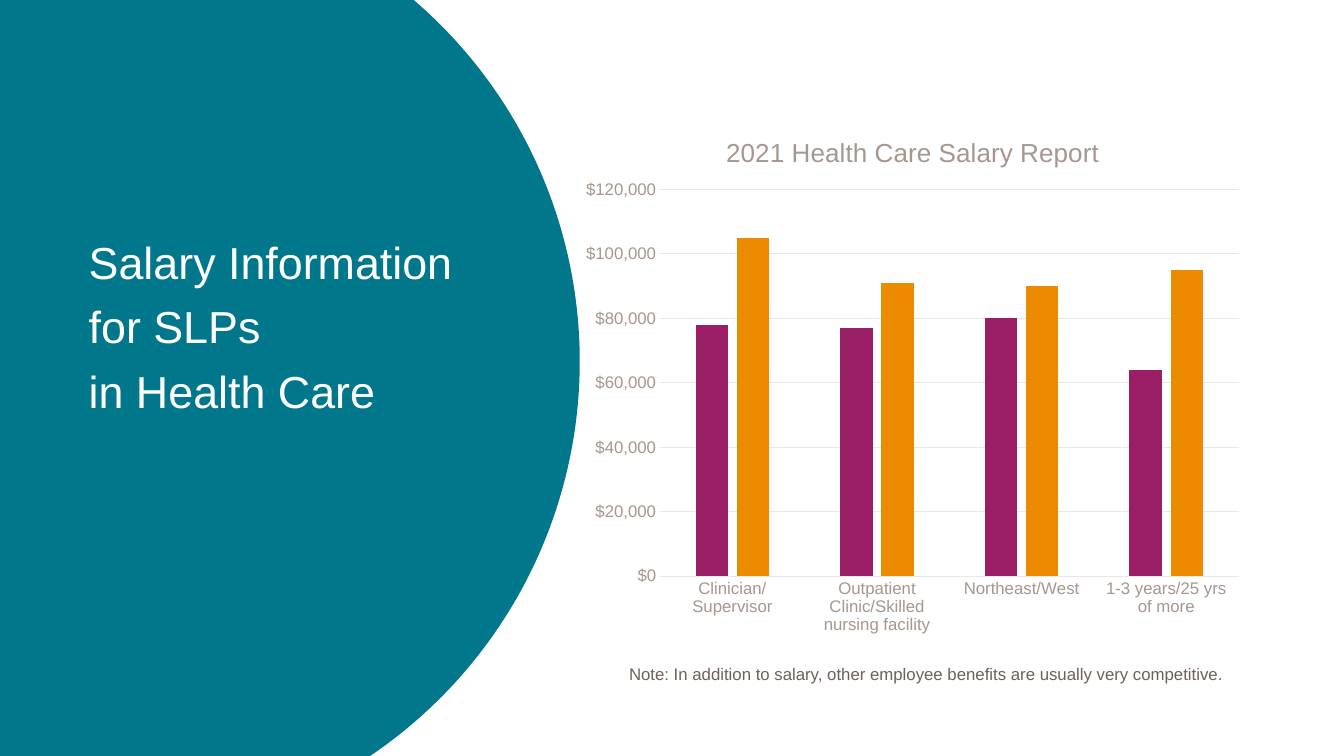
"""Build the slide on health care salaries for SLPs."""
from lxml import etree
from pptx import Presentation
from pptx import util as u
from pptx.chart.data import CategoryChartData
from pptx.dml.color import RGBColor
from pptx.enum import chart as charts, shapes, text
from pptx.oxml import parse_xml
from pptx.oxml.ns import nsdecls

PX = 9144
FONT = "Arial"
COLORS = {
    "teal": "00778B", "plum": "991E66", "orange": "ED8B00", "white": "FFFFFF",
    "brown": "6E6159", "taupe": "A5978F", "grid": "EAE7E5",
}
CATEGORIES = ["Clinician/Supervisor", "Outpatient Clinic/Skilled nursing facility",
              "Northeast/West", "1-3 years/25 yrs of more"]
SERIES = [("Series 1", "plum", (78000, 77000, 80000, 64000)),
          ("Series 2", "orange", (105000, 91000, 90000, 95000))]
TITLE_LAYOUT = {"xMode": "edge", "yMode": "edge", "x": 0.22, "y": 0.04}
PLOT_LAYOUT = {"layoutTarget": "inner", "xMode": "edge", "yMode": "edge",
               "x": 0.13, "y": 0.15, "w": 0.85, "h": 0.72}


def px(*lengths):
    return [u.Emu(length * PX) for length in lengths]


def color(name):
    return RGBColor.from_string(COLORS[name])


def apply(target, formats):
    for name, value in formats.items():
        setattr(target, name, value)


def style_font(font, size, color_name):
    apply(font, {"name": FONT, "size": u.Pt(size), "bold": False})
    font.color.rgb = color(color_name)


def fill_text(shape, words, size, color_name, frame_formats, paragraph_formats):
    frame = shape.text_frame
    apply(frame, {"word_wrap": True, "auto_size": text.MSO_AUTO_SIZE.NONE, **frame_formats})
    paragraph = frame.paragraphs[0]
    paragraph.text = words
    apply(paragraph, {"alignment": text.PP_ALIGN.LEFT, **paragraph_formats})
    for run in paragraph.runs:
        style_font(run.font, size, color_name)


def add_backdrop(slide, box):
    circle = slide.shapes.add_shape(shapes.MSO_SHAPE.OVAL, *px(*box))
    circle.shadow.inherit = False
    circle.fill.solid()
    circle.fill.fore_color.rgb = color("teal")
    circle.line.fill.background()
    slide.shapes._spTree.insert(2, circle._element)


def add_title(slide, words, box):
    title = slide.shapes.title
    apply(title, dict(zip(("left", "top", "width", "height"), px(*box))))
    fill_text(title, words, 32, "white",
              {"vertical_anchor": text.MSO_ANCHOR.BOTTOM}, {"line_spacing": 1.2})


def add_note(slide, words, box):
    note = slide.shapes.add_textbox(*px(*box))
    fill_text(note, words, 12, "brown",
              {"vertical_anchor": text.MSO_ANCHOR.TOP}, {"line_spacing": 0.9})


def manual_layout(values):
    layout = parse_xml(f"<c:layout {nsdecls('c')}><c:manualLayout/></c:layout>")
    for name, value in values.items():
        tag = f"{{{layout.nsmap['c']}}}{name}"
        etree.SubElement(layout[0], tag).set("val", str(value))
    return layout


def place(element, values):
    for layout in element.findall("c:layout", element.nsmap):
        element.remove(layout)
    index = 1 if element.tag.endswith("}title") else 0
    element.insert(index, manual_layout(values))


def style_line(line):
    line.color.rgb = color("grid")
    line.width = u.Pt(0.75)


def style_axes(chart):
    for axis in (chart.category_axis, chart.value_axis):
        apply(axis, {"major_tick_mark": charts.XL_TICK_MARK.NONE,
                     "minor_tick_mark": charts.XL_TICK_MARK.NONE})
        style_font(axis.tick_labels.font, 12, "taupe")
    style_line(chart.category_axis.format.line)
    values = chart.value_axis
    apply(values, {"minimum_scale": 0, "maximum_scale": 120000,
                   "major_unit": 20000, "has_major_gridlines": True})
    apply(values.tick_labels, {"number_format": '"$"#,##0',
                               "number_format_is_linked": False})
    values.format.line.fill.background()
    style_line(values.major_gridlines.format.line)


def add_salary_chart(slide, heading, box):
    data = CategoryChartData(number_format='"$"#,##0')
    data.categories = CATEGORIES
    for name, _, salaries in SERIES:
        data.add_series(name, salaries)
    frame = slide.shapes.add_chart(
        charts.XL_CHART_TYPE.COLUMN_CLUSTERED, *px(*box), data)
    chart = frame.chart
    style_font(chart.font, 10, "brown")
    apply(chart, {"has_legend": False, "has_title": True})
    paragraph = chart.chart_title.text_frame.paragraphs[0]
    paragraph.text = heading
    style_font(paragraph.runs[0].font, 18.6, "taupe")
    chart.chart_title.include_in_layout = False
    style_axes(chart)
    plot = chart.plots[0]
    apply(plot, {"gap_width": 219, "overlap": -27, "vary_by_categories": False})
    for series, (_, color_name, _) in zip(plot.series, SERIES):
        series.invert_if_negative = False
        series.format.fill.solid()
        series.format.fill.fore_color.rgb = color(color_name)
    place(chart.chart_title._element, TITLE_LAYOUT)
    place(chart._chartSpace.chart.plotArea, PLOT_LAYOUT)


def main():
    presentation = Presentation()
    presentation.slide_width, presentation.slide_height = px(1333, 750)
    slide = presentation.slides.add_slide(presentation.slide_layouts[5])
    add_backdrop(slide, (-370, -114, 945, 945))
    add_salary_chart(slide, "2021 Health Care Salary Report", (567, 108, 675, 533))
    add_title(slide, "Salary Information\vfor SLPs\vin Health Care", (78, 265, 580, 154))
    add_note(slide, "Note: In addition to salary, other employee benefits "
             "are usually very competitive.", (614, 656, 659, 35))
    presentation.save("out.pptx")


if __name__ == "__main__":
    main()
